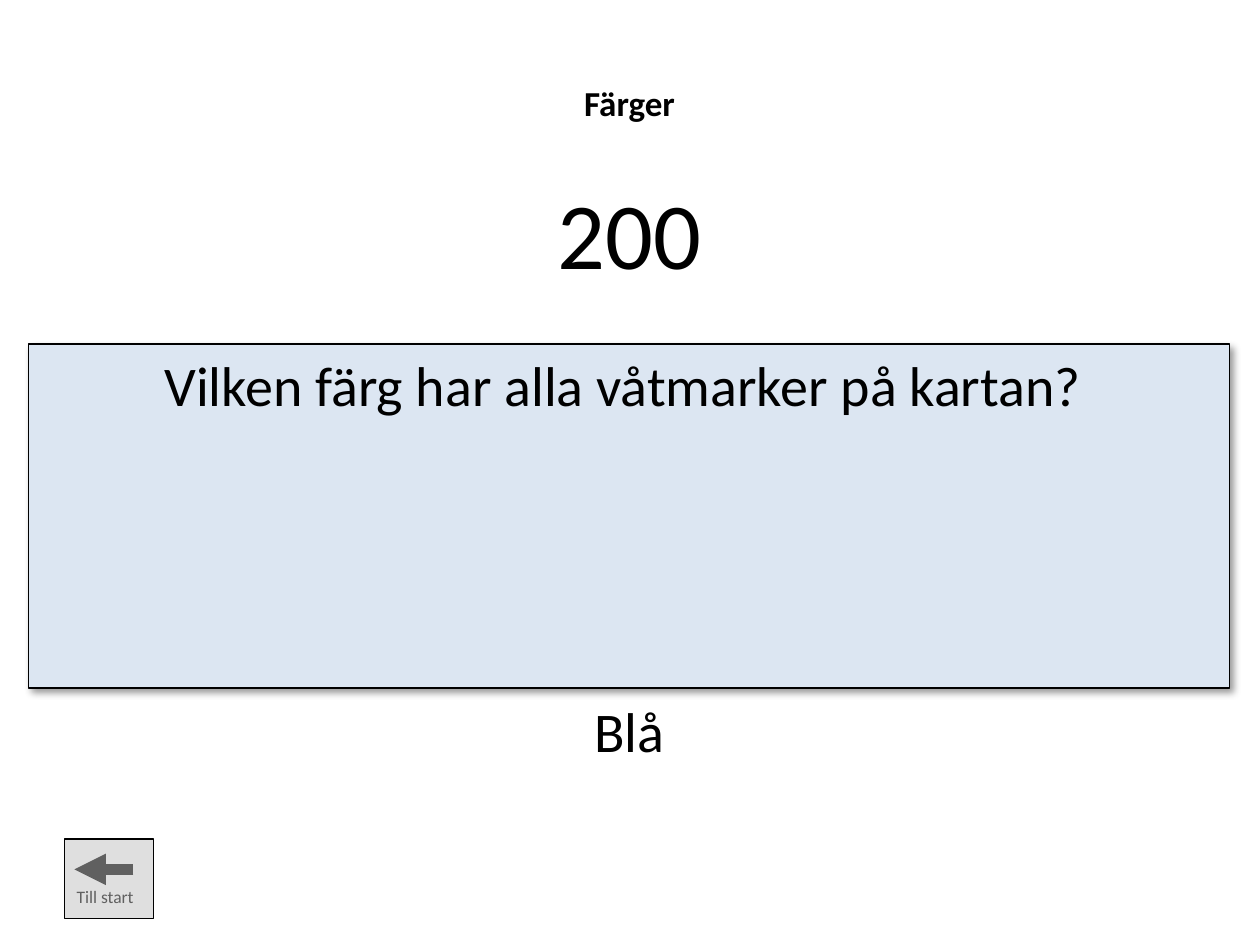
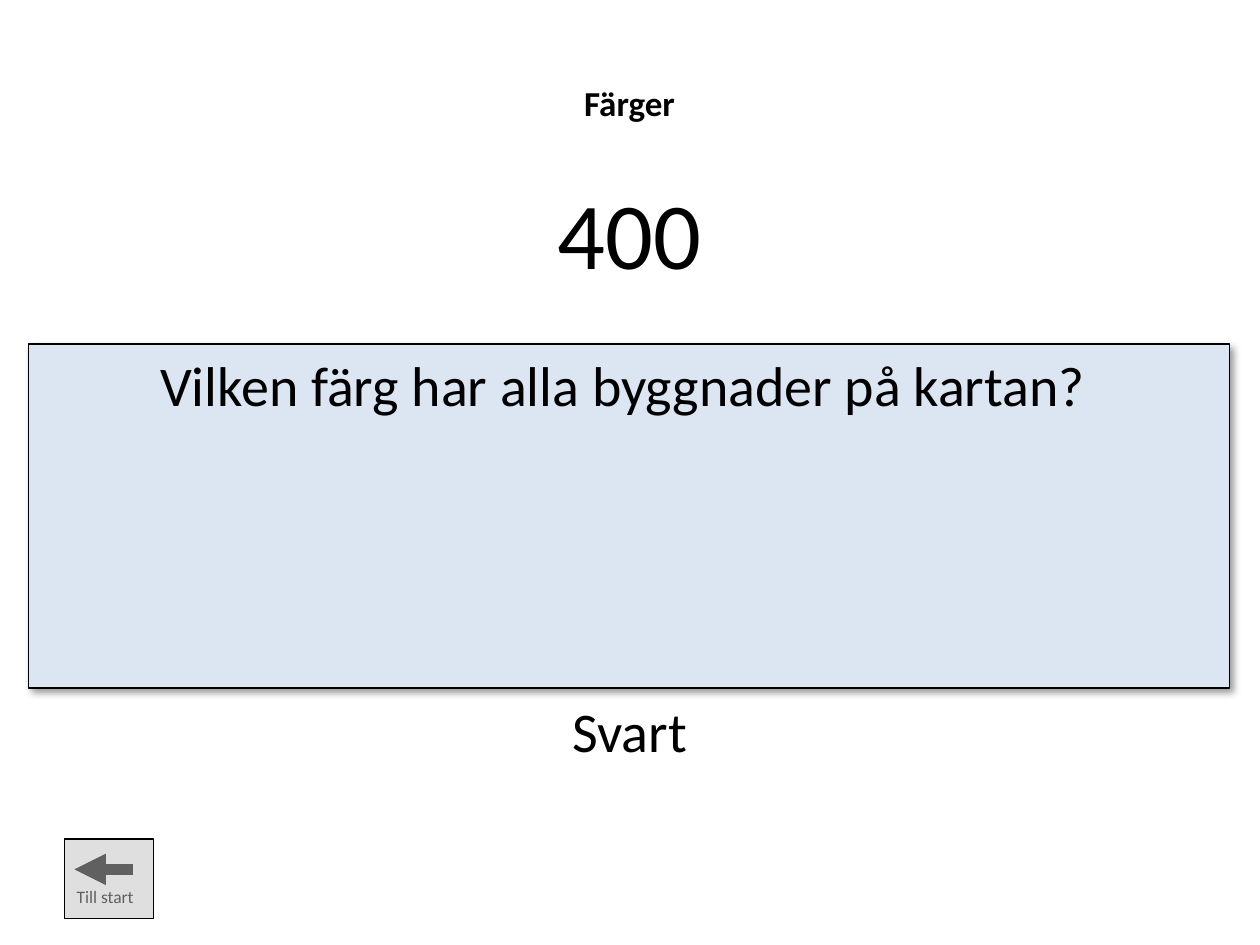
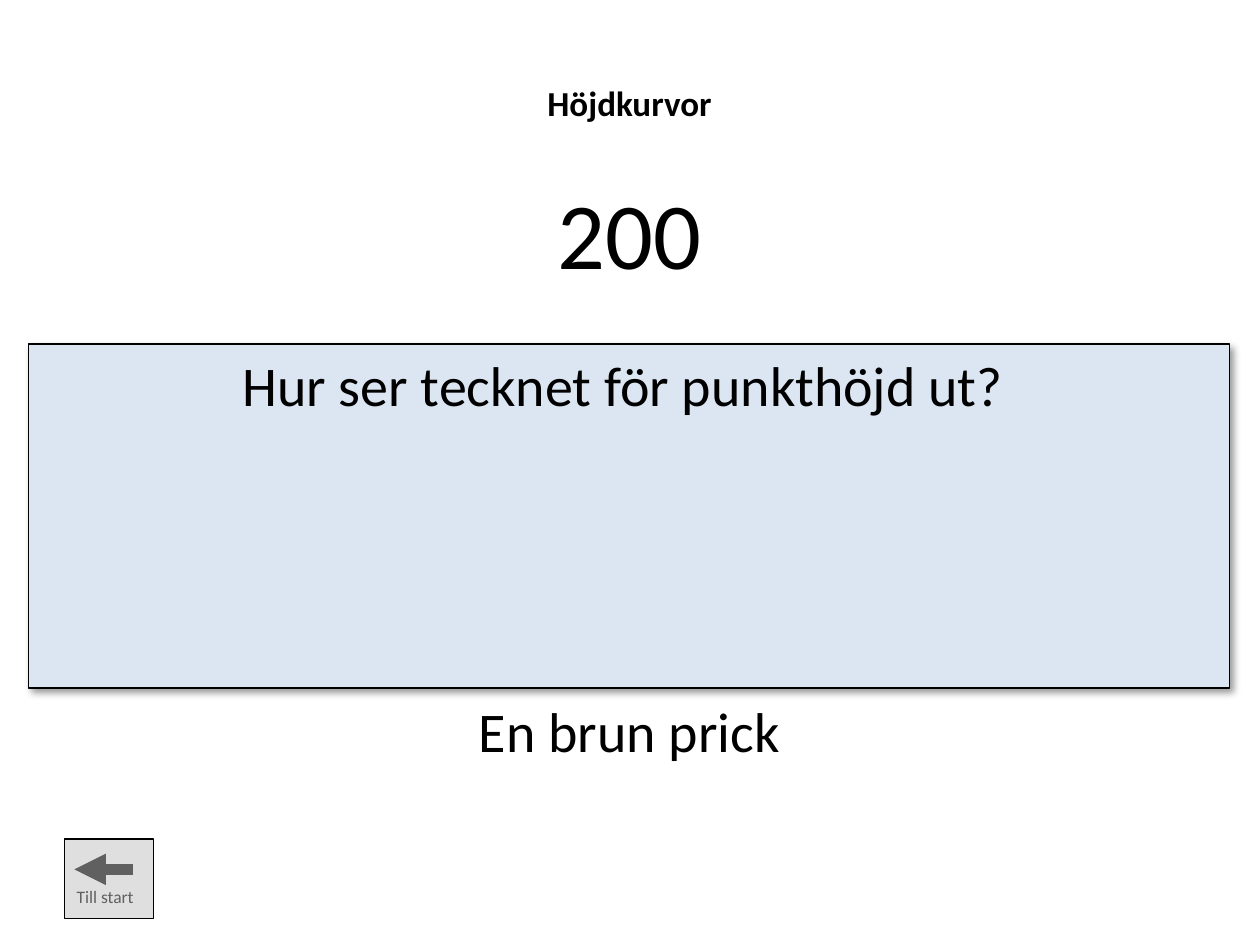
from pptx import Presentation
from pptx.dml.color import RGBColor
from pptx.enum.shapes import MSO_CONNECTOR, MSO_SHAPE
from pptx.enum.text import MSO_ANCHOR, MSO_AUTO_SIZE, PP_ALIGN
from pptx.oxml import parse_xml
from pptx.oxml.ns import nsdecls, qn
from pptx.util import Pt
from lxml.etree import SubElement

BLACK = RGBColor(0x00, 0x00, 0x00)
PALE_BLUE = RGBColor(0xDC, 0xE6, 0xF2)
SILVER = RGBColor(0xC0, 0xC0, 0xC0)
FONT = "Calibri"
TITLE_ONLY = 5

# Boxes as left, top, width, height in points
HEADING_BOX = (19.5, 43.2, 680.5, 129.6)
QUESTION_BOX = (16.5, 196.6, 686.2, 196.6)
ANSWER_BOX = (19.5, 394.6, 680.5, 45.4)
BUTTON_BOX = (36.7, 479.5, 51.1, 45.4)

# Category, points, question, answer
CARDS = [
    ("Färger", "200", "Vilken färg har alla våtmarker på kartan?", "Blå"),
    ("Färger", "400", "Vilken färg har alla byggnader på kartan?", "Svart"),
    ("Höjdkurvor", "200", "Hur ser tecknet för punkthöjd ut?", "En brun prick"),
]


def style(para, size, align=PP_ALIGN.CENTER, bold=False):
    para.alignment = align
    para.font.name = FONT
    para.font.size = Pt(size)
    para.font.bold = bold
    para.font.color.rgb = BLACK


def add_text(page, box, text, size, align=PP_ALIGN.CENTER):
    frame = page.shapes.add_textbox(*map(Pt, box)).text_frame
    frame.word_wrap = True
    frame.text = text
    style(frame.paragraphs[0], size, align)


def add_panel(page, box, color):
    panel = page.shapes.add_shape(MSO_SHAPE.RECTANGLE, *map(Pt, box))
    panel.shadow.inherit = False
    panel.fill.solid()
    panel.fill.fore_color.rgb = color
    panel.line.color.rgb = BLACK
    panel.line.width = Pt(0.75)
    return panel


def add_heading(page, box, category, points):
    title = page.shapes.title
    title.left, title.top, title.width, title.height = map(Pt, box)
    frame = title.text_frame
    frame.auto_size = MSO_AUTO_SIZE.NONE
    frame.vertical_anchor = MSO_ANCHOR.TOP
    frame.text = f"{category}\n{points}"
    name, value = frame.paragraphs
    style(name, 20, bold=True)
    style(value, 54)
    value.space_before = Pt(29)


def add_question(page, box, question):
    left, top, width, _ = box
    panel = add_panel(page, box, PALE_BLUE)
    # Soft shadow, down to the right
    effects = panel._element.spPr.find(qn("a:effectLst"))
    effects.append(parse_xml(
        f'<a:outerShdw {nsdecls("a")} blurRad="{Pt(4)}" dist="{Pt(3)}" '
        f'dir="{45 * 60000}" algn="tl" rotWithShape="0">'
        f'<a:srgbClr val="{BLACK}"><a:alpha val="40000"/></a:srgbClr>'
        '</a:outerShdw>'))
    add_text(page, (left + 4.8, top, width - 16.6, 46), question, 32)


def add_start_button(page, box):
    left, top, width, height = box
    # Arrow pointing left
    middle = top + 17.3
    arrow = page.shapes.add_connector(
        MSO_CONNECTOR.STRAIGHT,
        Pt(left + 39.6), Pt(middle), Pt(left + 5.8), Pt(middle))
    arrow.line.color.rgb = BLACK
    arrow.line.width = Pt(6)
    SubElement(arrow.line._get_or_add_ln(), qn("a:tailEnd"), type="triangle")
    SubElement(arrow._element.spPr, qn("a:effectLst"))
    # Label
    add_text(page, (left, top + 23.1, width, 19.4), "Till start", 10,
             PP_ALIGN.LEFT)
    # Half-transparent face over arrow and label
    face = add_panel(page, (left, top, width, height), SILVER)
    color = face._element.spPr.find(qn("a:solidFill"))[0]
    SubElement(color, qn("a:alpha"), val="50000")


def add_card(deck, category, points, question, answer):
    page = deck.slides.add_slide(deck.slide_layouts[TITLE_ONLY])
    add_heading(page, HEADING_BOX, category, points)
    add_question(page, QUESTION_BOX, question)
    add_start_button(page, BUTTON_BOX)
    add_text(page, ANSWER_BOX, answer, 32)


def main():
    deck = Presentation()
    deck.slide_width, deck.slide_height = Pt(720), Pt(540)
    for card in CARDS:
        add_card(deck, *card)
    deck.save("out.pptx")


if __name__ == "__main__":
    main()
